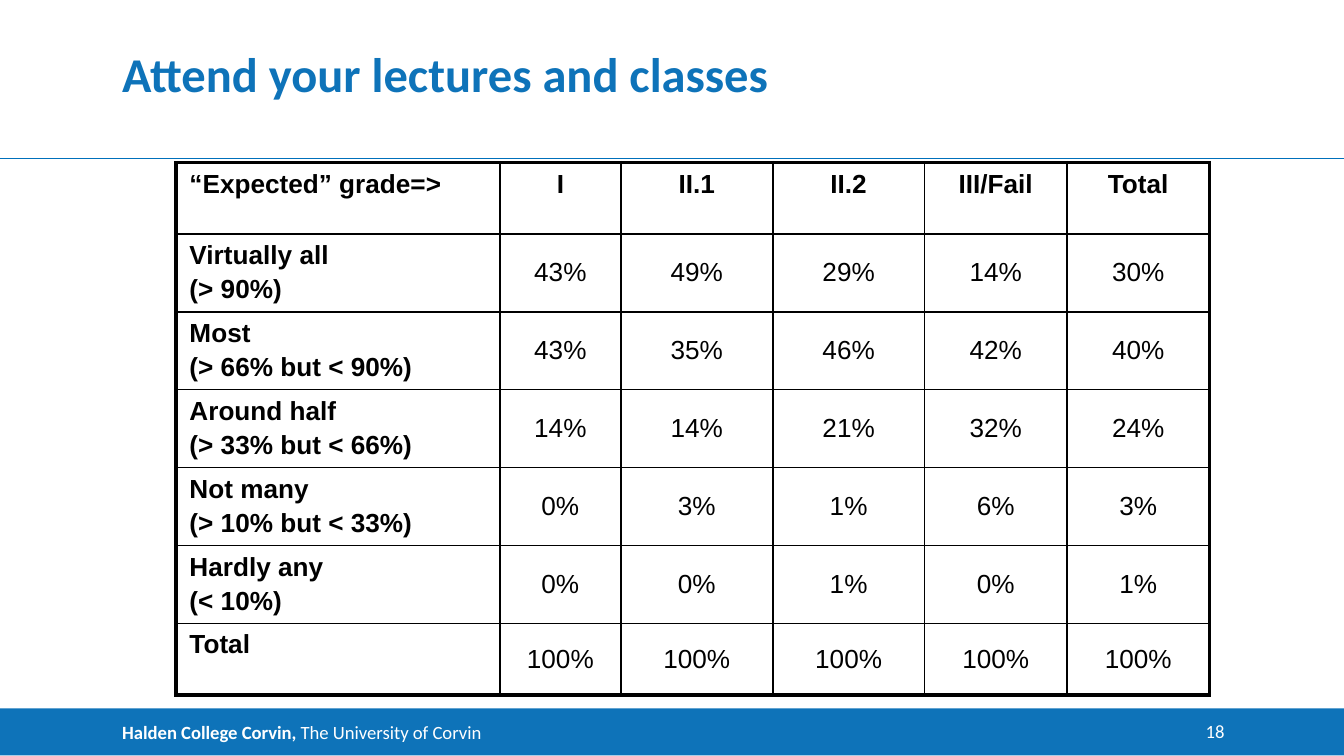
from lxml import etree
from pptx import Presentation
from pptx.dml.color import RGBColor
from pptx.enum.shapes import MSO_CONNECTOR, MSO_SHAPE
from pptx.enum.text import MSO_ANCHOR, PP_ALIGN
from pptx.oxml.ns import qn
from pptx.util import Inches, Pt

LEFT, CENTER, RIGHT = PP_ALIGN.LEFT, PP_ALIGN.CENTER, PP_ALIGN.RIGHT
TOP, MIDDLE, BOTTOM = MSO_ANCHOR.TOP, MSO_ANCHOR.MIDDLE, MSO_ANCHOR.BOTTOM
RECTANGLE = MSO_SHAPE.RECTANGLE
STRAIGHT = MSO_CONNECTOR.STRAIGHT

COLORS = {"blue": "0E73B9", "rule": "0070BB", "white": "FFFFFF", "black": "000000"}
TITLE = {"name": "Calibri", "size": Pt(26), "bold": True}
FOOTER = {"name": "Calibri", "size": Pt(10), "bold": False}
CELL = {"name": "Arial", "size": Pt(14), "bold": False}

SLIDE_WIDTH = 10
SLIDE_HEIGHT = SLIDE_WIDTH * 9 / 16
MARGIN = 0.91
THIN, THICK = 1, 2.25

COLUMN_WIDTHS = [2.41, 0.9, 1.13, 1.13, 1.06, 1.06]
ROW_HEIGHTS = [0.53] + [0.58] * 5 + [0.53]
ATTENDANCE = [
    (["“Expected” grade=>"], "I", "II.1", "II.2", "III/Fail", "Total"),
    (["Virtually all", "(> 90%)"], "43%", "49%", "29%", "14%", "30%"),
    (["Most", "(> 66% but < 90%)"], "43%", "35%", "46%", "42%", "40%"),
    (["Around half", "(> 33% but < 66%)"], "14%", "14%", "21%", "32%", "24%"),
    (["Not many", "(> 10% but < 33%)"], "0%", "3%", "1%", "6%", "3%"),
    (["Hardly any", "(< 10%)"], "0%", "0%", "1%", "0%", "1%"),
    (["Total"], "100%", "100%", "100%", "100%", "100%"),
]


def color(name):
    return RGBColor.from_string(COLORS[name])


def add_run(paragraph, text, values, color_name):
    run = paragraph.add_run()
    run.text = text
    for name, value in values.items():
        setattr(run.font, name, value)
    run.font.color.rgb = color(color_name)


def set_frame(frame, anchor, left_margin=0):
    values = {"word_wrap": True, "vertical_anchor": anchor,
              "margin_left": Inches(left_margin), "margin_right": 0,
              "margin_top": 0, "margin_bottom": 0}
    for name, value in values.items():
        setattr(frame, name, value)


def add_label(slide, box, text, values, color_name, align, anchor):
    frame = slide.shapes.add_textbox(*map(Inches, box)).text_frame
    set_frame(frame, anchor)
    paragraph = frame.paragraphs[0]
    paragraph.alignment = align
    add_run(paragraph, text, values, color_name)


def add_header(slide, left, top, width, height):
    # Title above a full-width rule
    title_box = (left + MARGIN, top + 0.3, width - 1.8, 0.46)
    add_label(slide, title_box, "Attend your lectures and classes", TITLE, "blue", LEFT, BOTTOM)
    bottom = Inches(top + height)
    rule = slide.shapes.add_connector(STRAIGHT, Inches(left), bottom, Inches(left + width), bottom)
    rule.line.color.rgb = color("rule")
    rule.line.width = Pt(0.75)
    etree.SubElement(rule._element.spPr, qn("a:effectLst"))


def add_footer(slide, left, top, width, height):
    # Band with the institution's name
    band = slide.shapes.add_shape(RECTANGLE, *map(Inches, (left, top, width, height)))
    band.shadow.inherit = False
    band.fill.solid()
    band.fill.fore_color.rgb = color("blue")
    band.line.fill.background()
    set_frame(band.text_frame, MIDDLE, MARGIN)
    paragraph = band.text_frame.paragraphs[0]
    paragraph.alignment = LEFT
    add_run(paragraph, "Halden College Corvin, ", {**FOOTER, "bold": True}, "white")
    add_run(paragraph, "The University of Corvin", FOOTER, "white")
    # Page number
    number_box = (left + width - 1.3, top + 0.09, 0.41, 0.17)
    add_label(slide, number_box, "18", FOOTER, "white", RIGHT, TOP)


def set_borders(cell, widths):
    properties = cell._tc.get_or_add_tcPr()
    for side, width in widths.items():
        line = etree.SubElement(properties, qn(f"a:ln{side}"), w=str(Pt(width)))
        fill = etree.SubElement(line, qn("a:solidFill"))
        etree.SubElement(fill, qn("a:srgbClr"), val=COLORS["black"])


def fill_cell(cell, lines, bold, align, anchor):
    cell.vertical_anchor = anchor
    cell.fill.solid()
    cell.fill.fore_color.rgb = color("white")
    for index, text in enumerate(lines):
        frame = cell.text_frame
        paragraph = frame.add_paragraph() if index else frame.paragraphs[0]
        paragraph.alignment = align
        spacing = etree.SubElement(paragraph._p.get_or_add_pPr(), qn("a:spcBef"))
        etree.SubElement(spacing, qn("a:spcPct"), val="20000")
        add_run(paragraph, text, {**CELL, "bold": bold}, "black")


def add_attendance_table(slide, left, top, width, height):
    rows, columns = len(ATTENDANCE), len(COLUMN_WIDTHS)
    box = map(Inches, (left, top, width, height))
    table = slide.shapes.add_table(rows, columns, *box).table
    table.first_row = table.horz_banding = False
    for column, column_width in zip(table.columns, COLUMN_WIDTHS):
        column.width = Inches(column_width)
    for row, row_height in zip(table.rows, ROW_HEIGHTS):
        row.height = Inches(row_height)

    for r, values in enumerate(ATTENDANCE):
        for c, value in enumerate(values):
            cell = table.cell(r, c)
            # Thick outer frame, thin inner grid
            outer = {"L": c == 0, "R": c == columns - 1, "T": r == 0, "B": r == rows - 1}
            set_borders(cell, {side: THICK if edge else THIN for side, edge in outer.items()})
            heading = r == 0 or c == 0
            fill_cell(cell, value if c == 0 else [value], heading,
                      LEFT if c == 0 else CENTER, TOP if heading else MIDDLE)
        # Two-line headings need a small bottom margin to fit the row
        table.cell(r, 0).margin_bottom = Inches(0.01)


def main():
    presentation = Presentation()
    presentation.slide_width = Inches(SLIDE_WIDTH)
    presentation.slide_height = Inches(SLIDE_HEIGHT)
    slide = presentation.slides.add_slide(presentation.slide_layouts[6])
    add_footer(slide, 0, 5.27, SLIDE_WIDTH, 0.35)
    add_header(slide, 0, 0, SLIDE_WIDTH, 1.18)
    add_attendance_table(slide, 1.31, 1.21, sum(COLUMN_WIDTHS), sum(ROW_HEIGHTS))
    presentation.save("out.pptx")


if __name__ == "__main__":
    main()
